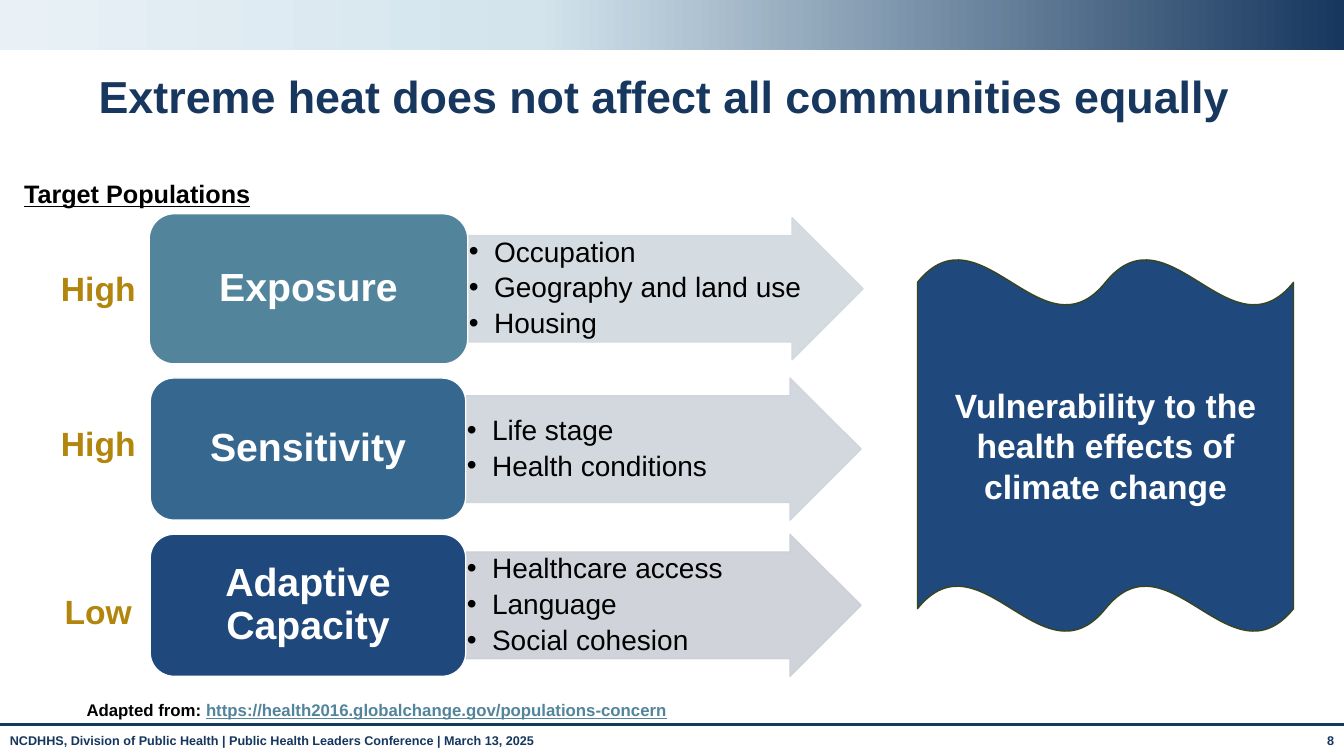
from lxml import etree
from pptx import Presentation
from pptx import util as u
from pptx.dml.color import RGBColor
from pptx.enum import shapes, text
from pptx.oxml.ns import qn

COLS, ROWS = 13.33, 7.5  # grid of one-inch cells
NAVY, BLUE, TEAL, GOLD = "17375E", "1F497D", "52849C", "B2850D"
WHITE, BLACK = "FFFFFF", "000000"
LEFT, CENTER, RIGHT = text.PP_ALIGN.LEFT, text.PP_ALIGN.CENTER, text.PP_ALIGN.RIGHT
TOP, MIDDLE, BOTTOM = (text.MSO_ANCHOR.TOP, text.MSO_ANCHOR.MIDDLE,
                       text.MSO_ANCHOR.BOTTOM)
KIND = shapes.MSO_SHAPE


def rgb(value):
    return RGBColor.from_string(value)


def add_xml(parent, tag, **attrs):
    node = etree.SubElement(parent, qn(tag))
    for name, value in attrs.items():
        node.set(name, str(value))
    return node


class Deck:
    """Holds the style and the current slide."""

    font = "Arial"

    def __init__(self):
        self.prs = Presentation()
        self.prs.slide_width, self.prs.slide_height = self.cells(COLS, ROWS)
        self.slide = self.prs.slides.add_slide(self.prs.slide_layouts[6])

    def cells(self, *counts):
        return [u.Inches(n) for n in counts]

    def set_text(self, s, paragraphs, size, color, bold=True, align=LEFT,
                 anchor=TOP, inset=(0.1, 0.05), bullet=False, **para):
        """Each paragraph is a list of (words, font settings) runs."""
        tf = s.text_frame
        x, y = self.cells(*inset)
        frame = dict(word_wrap=True, vertical_anchor=anchor, margin_left=x,
                     margin_right=x, margin_top=y, margin_bottom=y)
        for name, value in frame.items():
            setattr(tf, name, value)
        for i, runs in enumerate(paragraphs):
            p = tf.paragraphs[0] if i == 0 else tf.add_paragraph()
            for name, value in dict(para, alignment=align).items():
                setattr(p, name, value)
            if bullet:
                self.bullet(p)
            for words, extra in runs:
                r = p.add_run()
                r.text = words
                style = dict(name=self.font, size=u.Pt(size), bold=bold)
                style.update(extra)
                r.font.color.rgb = rgb(style.pop("color", color))
                for name, value in style.items():
                    setattr(r.font, name, value)

    def bullet(self, p):
        pPr = p._p.get_or_add_pPr()
        pPr.set("marL", str(u.Inches(0.25)))
        pPr.set("indent", str(-u.Inches(0.25)))
        add_xml(pPr, "a:buFont", typeface=self.font)
        add_xml(pPr, "a:buChar", char="•")

    def label(self, at, runs, size, color, **style):
        s = self.slide.shapes.add_textbox(*self.cells(*at))
        self.set_text(s, [runs], size, color, **style)

    def shape(self, kind, at, fill, line=None, alpha=None):
        s = self.slide.shapes.add_shape(kind, *self.cells(*at))
        s.shadow.inherit = False
        s.fill.solid()
        s.fill.fore_color.rgb = rgb(fill)
        if line:
            s.line.color.rgb = rgb(line)
            s.line.width = u.Pt(1)
        else:
            s.line.fill.background()
        if alpha:
            for clr in s._element.spPr.iter(qn("a:srgbClr")):
                add_xml(clr, "a:alpha", val=alpha * 1000)
        return s

    def gradient_band(self, at, stops, angle):
        s = self.shape(KIND.RECTANGLE, at, stops[0][1])
        solid = s._element.spPr.find(qn("a:solidFill"))
        grad = etree.Element(qn("a:gradFill"), rotWithShape="1")
        stop_list = add_xml(grad, "a:gsLst")
        for pos, color in stops:
            stop = add_xml(stop_list, "a:gs", pos=pos * 1000)
            add_xml(stop, "a:srgbClr", val=color)
        add_xml(grad, "a:lin", ang=angle * 60000, scaled=0)
        s._element.spPr.replace(solid, grad)

    def rule(self, y, color, width):
        s = self.slide.shapes.add_connector(
            shapes.MSO_CONNECTOR.STRAIGHT, *self.cells(0, y, COLS, y))
        s.line.color.rgb = rgb(color)
        s.line.width = u.Pt(width)
        add_xml(s._element.spPr, "a:effectLst")

    def factor(self, name, fill, box, arrow_fill, arrow_top, points):
        """A rounded box with a bulleted arrow leaving its right edge."""
        left, top, width, height = box
        arrow = self.shape(KIND.RIGHT_ARROW,
                           (left + width, arrow_top, 3.92, 1.41),
                           arrow_fill, arrow_fill, alpha=90)
        arrow.adjustments[0] = 0.75
        self.set_text(arrow, [[(point, {})] for point in points], 20, BLACK,
                      bold=False, anchor=MIDDLE, inset=(0.01, 0.01),
                      bullet=True, level=1, line_spacing=0.9,
                      space_after=u.Pt(4))
        s = self.shape(KIND.ROUNDED_RECTANGLE, box, fill, WHITE)
        self.set_text(s, [[(name, {})]], 28, WHITE, align=CENTER,
                      anchor=MIDDLE, inset=(0.12, 0.06), line_spacing=0.9)


def main():
    deck = Deck()

    # Header band, footer and rule
    deck.gradient_band((0, 0, COLS, 0.5),
                       [(0, NAVY), (60, "D3E4ED"), (100, "E9F1F6")], 180)
    deck.label((0, 7.22, 11.66, 0.29),
               [("NCDHHS, Division of Public Health | Public Health Leaders "
                 "Conference | March 13, 2025", {})], 9, "15365E")
    deck.label((12.74, 7.22, 0.59, 0.3), [("8", {})], 9, "15365E", align=RIGHT)
    deck.rule(7.19, NAVY, 1.75)

    # Title and source
    deck.label((0.88, 0.68, 11.95, 0.6),
               [("Extreme heat does not affect all communities equally", {})],
               32, NAVY, anchor=MIDDLE, line_spacing=0.9)
    deck.label((0.76, 6.83, 11.65, 0.36),
               [("Adapted from: ", {}),
                ("https://health2016.globalchange.gov/populations-concern",
                 dict(color=TEAL, underline=True))],
               12, BLACK, anchor=BOTTOM)

    # Factors: name, fill, box, arrow fill, arrow top, points
    factors = [
        ("Exposure", TEAL, (1.48, 2.12, 3.16, 1.49), "D1D9DE", 2.16,
         ["Occupation", "Geography and land use", "Housing"]),
        ("Sensitivity", "36688F", (1.49, 3.75, 3.13, 1.41), "CED4DB", 3.75,
         ["Life stage", "Health conditions"]),
        ("Adaptive Capacity", BLUE, (1.49, 5.3, 3.13, 1.41), "CCCFD7", 5.3,
         ["Healthcare access", "Language", "Social cohesion"]),
    ]
    for factor in factors:
        deck.factor(*factor)

    # Outcome
    wave = deck.shape(KIND.DOUBLE_WAVE, (9.1, 2.57, 3.73, 3.7), BLUE, "38451C")
    deck.set_text(wave, [[("Vulnerability to the health effects of climate "
                           "change", {})]], 24, WHITE, align=CENTER,
                  anchor=MIDDLE)

    # Ratings and their heading
    for rating, top in [("High", 2.61), ("High", 4.15), ("Low", 5.81)]:
        deck.label((0.46, top, 1.03, 0.5), [(rating, {})], 24, GOLD,
                   align=CENTER)
    deck.label((0.14, 1.72, 2.54, 0.4),
               [("Target Populations", dict(underline=True))], 18, BLACK)

    deck.prs.save("out.pptx")


if __name__ == "__main__":
    main()
